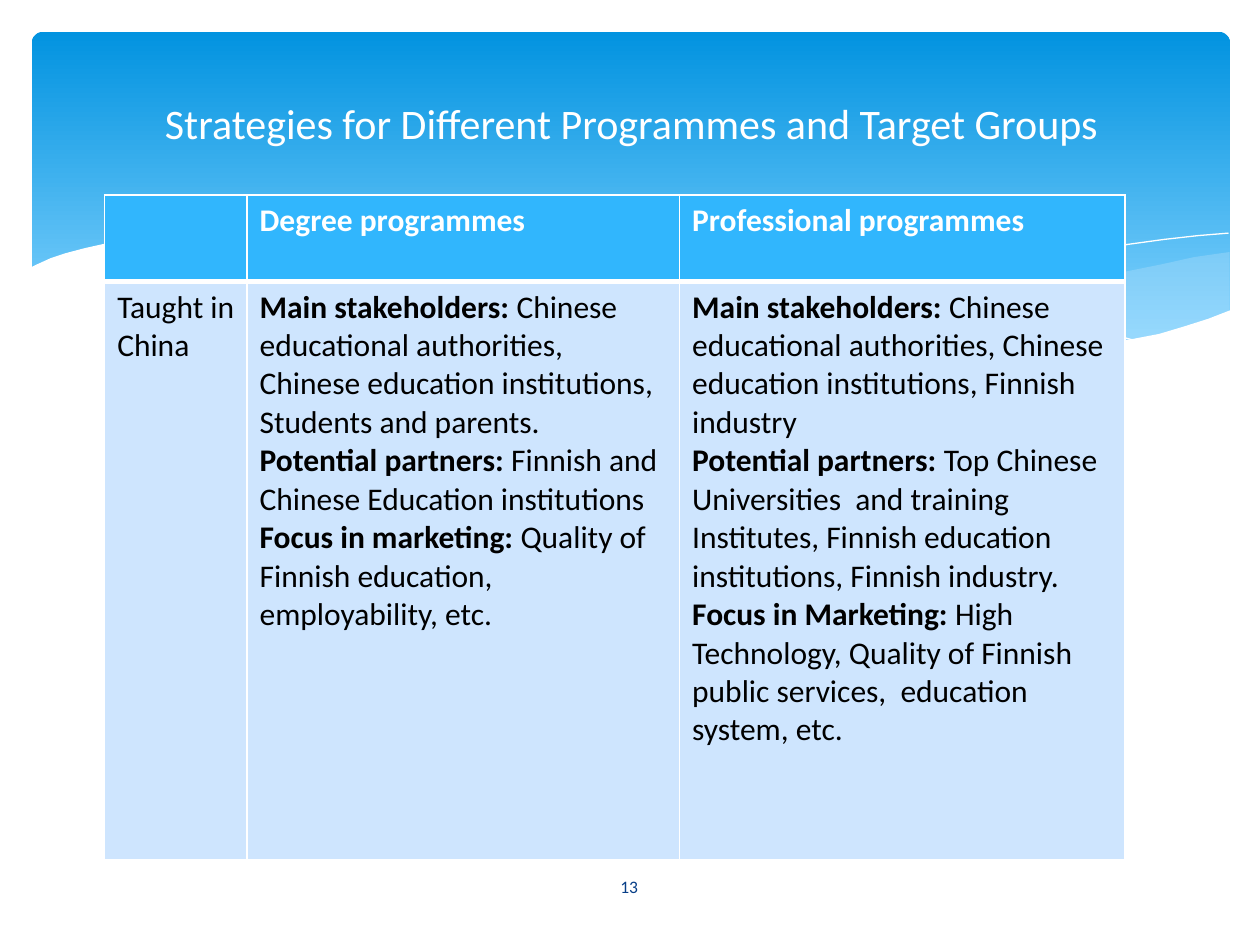
from lxml import etree
from pptx import Presentation
from pptx.dml.color import RGBColor
from pptx.enum.shapes import MSO_SHAPE
from pptx.enum.text import MSO_ANCHOR, PP_ALIGN
from pptx.oxml.ns import qn
from pptx.util import Cm, Pt

ROUNDED = MSO_SHAPE.ROUNDED_RECTANGLE
MIDDLE, CENTER = MSO_ANCHOR.MIDDLE, PP_ALIGN.CENTER
COLORS = {
    "white": "FFFFFF", "black": "000000", "page number": "073E87",
    "banner top": "0293E0", "banner bottom": "83D3FE", "wave": "C6E7FC",
    "header": "31B6FD", "body": "CEE5FE",
}


def color(name):
    return RGBColor.from_string(COLORS[name])


def add_span(para, text, size, color_name, bold=False):
    span = para.add_run()
    span.text = text
    for name, value in {"name": "Calibri", "size": Pt(size), "bold": bold}.items():
        setattr(span.font, name, value)
    span.font.color.rgb = color(color_name)


deck = Presentation()
deck.slide_width, deck.slide_height = Cm(25.4), Cm(19.05)
page = deck.slides.add_slide(deck.slide_layouts[6])

# Banner: a rounded rectangle that fades downwards
banner = page.shapes.add_shape(ROUNDED, Cm(0.64), Cm(0.64), Cm(24.16), Cm(6.86))
banner.adjustments[0] = 0.034
banner.shadow.inherit = False
banner.line.fill.background()
banner.fill.gradient()
banner.fill.gradient_angle = 270
fade = [(0, "banner top"), (0.9, "banner bottom")]
for stop, (position, color_name) in zip(banner.fill.gradient_stops, fade):
    stop.position = position
    stop.color.rgb = color(color_name)

# Waves across the foot of the banner, from back to front.
# Freeform points are whole numbers, here hundredths of an inch.
WAVE_UNIT = Cm(2.54) / 100
right_swell = [
    (976, 200), (948, 204), (921, 210), (891, 216), (861, 223), (805, 237), (753, 248),
    (706, 257), (661, 265), (691, 269), (719, 272), (745, 275), (769, 277), (803, 278),
    (835, 277), (863, 275), (889, 272), (913, 267), (935, 262), (949, 257), (976, 247)]
long_swell = [
    (893, 273), (866, 269), (807, 260), (741, 247), (668, 231), (629, 222), (584, 211),
    (541, 203), (502, 196), (465, 191), (420, 187), (380, 185), (344, 186), (313, 188),
    (286, 191), (323, 196), (362, 203), (404, 211), (449, 222), (530, 240), (601, 255),
    (650, 264), (695, 270), (736, 275), (773, 277), (807, 278), (838, 278), (867, 276)]
falling_line = [
    (309, 195), (328, 192), (353, 189), (387, 187), (416, 187), (450, 188), (489, 190),
    (533, 194), (582, 200), (636, 208), (695, 219), (760, 233), (831, 251), (907, 272)]
rising_line = [
    (613, 257), (653, 246), (695, 235), (748, 223), (806, 210), (866, 199), (895, 194),
    (924, 190), (951, 187), (975, 185)]
white_crest = [
    (977, 246), (959, 253), (940, 259), (920, 265), (899, 269), (875, 273), (850, 275),
    (809, 277), (778, 276), (744, 274), (708, 270), (668, 265), (626, 258), (579, 250),
    (529, 239), (475, 227), (418, 213), (365, 202), (316, 194), (271, 188), (230, 185),
    (193, 184), (161, 184), (132, 186), (106, 189), (85, 193), (67, 197), (52, 201),
    (40, 205), (29, 210), (23, 213)]
white_foot = [(23, 329), (977, 329)]

WAVES = [  # points, fill (None for an open white line), opacity in percent
    (right_swell, "wave", 29),
    (long_swell, "wave", 40),
    (falling_line, None, 100),
    (rising_line, None, 100),
    (white_crest + white_foot, "white", 100),
]
for points, fill, opacity in WAVES:
    builder = page.shapes.build_freeform(*points[0], scale=WAVE_UNIT)
    builder.add_line_segments(points[1:], close=fill is not None)
    wave = builder.convert_to_shape()
    wave.shadow.inherit = False
    if fill is None:
        wave.fill.background()
        wave.line.color.rgb = color("white")
        wave.line.width = Pt(0)
    else:
        wave.line.fill.background()
        wave.fill.solid()
        wave.fill.fore_color.rgb = color(fill)
        if opacity < 100:
            tint = wave.element.spPr.find(qn("a:solidFill")).find(qn("a:srgbClr"))
            etree.SubElement(tint, qn("a:alpha")).set("val", str(opacity * 1000))

# Table: a cell is a list of paragraphs, a paragraph is (bold text, plain text)
header_cells = [[], [("Degree programmes", "")], [("Professional programmes", "")]]
china_cells = [
    [("", "Taught in China")],
    [
        ("Main stakeholders: ", "Chinese educational authorities,  Chinese education "
         "institutions, Students and parents."),
        ("Potential partners: ", "Finnish and Chinese Education institutions"),
        ("Focus in marketing:", " Quality of Finnish education, employability, etc."),
    ],
    [
        ("Main stakeholders:", " Chinese educational authorities, Chinese education "
         "institutions, Finnish industry"),
        ("Potential partners: ", "Top Chinese Universities  and training Institutes, "
         "Finnish education institutions, Finnish industry."),
        ("Focus in Marketing: ", "High Technology, Quality of Finnish public services,  "
         "education system, etc."),
    ],
]
COLUMN_WIDTHS = [2.87, 8.72, 8.98]
THIN, THICK = Pt(1), Pt(3)
ROWS = [  # cells, height, fill, text colour, top border, bottom border
    (header_cells, 1.75, "header", "white", THIN, THICK),
    (china_cells, 11.66, "body", "black", THICK, THIN),
]
table = page.shapes.add_table(
    len(ROWS), len(COLUMN_WIDTHS), Cm(2.11), Cm(3.93),
    Cm(sum(COLUMN_WIDTHS)), Cm(sum(row[1] for row in ROWS))).table
for column, width in zip(table.columns, COLUMN_WIDTHS):
    column.width = Cm(width)

for row, (contents, height, fill, text_color, top, bottom) in zip(table.rows, ROWS):
    row.height = Cm(height)
    borders = {"a:lnL": THIN, "a:lnR": THIN, "a:lnT": top, "a:lnB": bottom}
    for cell, paragraphs in zip(row.cells, contents):
        # Borders must stand before the fill in the cell's properties
        properties = cell._tc.get_or_add_tcPr()
        for tag, width in borders.items():
            border = etree.SubElement(properties, qn(tag), w=str(int(width)))
            paint = etree.SubElement(border, qn("a:solidFill"))
            etree.SubElement(paint, qn("a:srgbClr"), val=COLORS["white"])
        cell.fill.solid()
        cell.fill.fore_color.rgb = color(fill)

        frame = cell.text_frame
        for index, (strong, plain) in enumerate(paragraphs):
            para = frame.add_paragraph() if index else frame.paragraphs[0]
            for text, bold in ((strong, True), (plain, False)):
                if text:
                    add_span(para, text, 18, text_color, bold)

# Page number and title: text, (left, top, width, height), size, colour
LABELS = [
    ("13", (11.07, 17.37, 3.23, 1.02), 10, "page number"),
    ("Strategies for Different Programmes and Target Groups",
     (1.3, 0.74, 22.86, 3.48), 24, "white"),
]
for text, place, size, text_color in LABELS:
    box = page.shapes.add_textbox(*[Cm(length) for length in place])
    for name, value in {"word_wrap": True, "vertical_anchor": MIDDLE}.items():
        setattr(box.text_frame, name, value)
    para = box.text_frame.paragraphs[0]
    para.alignment = CENTER
    add_span(para, text, size, text_color)

deck.save("out.pptx")
